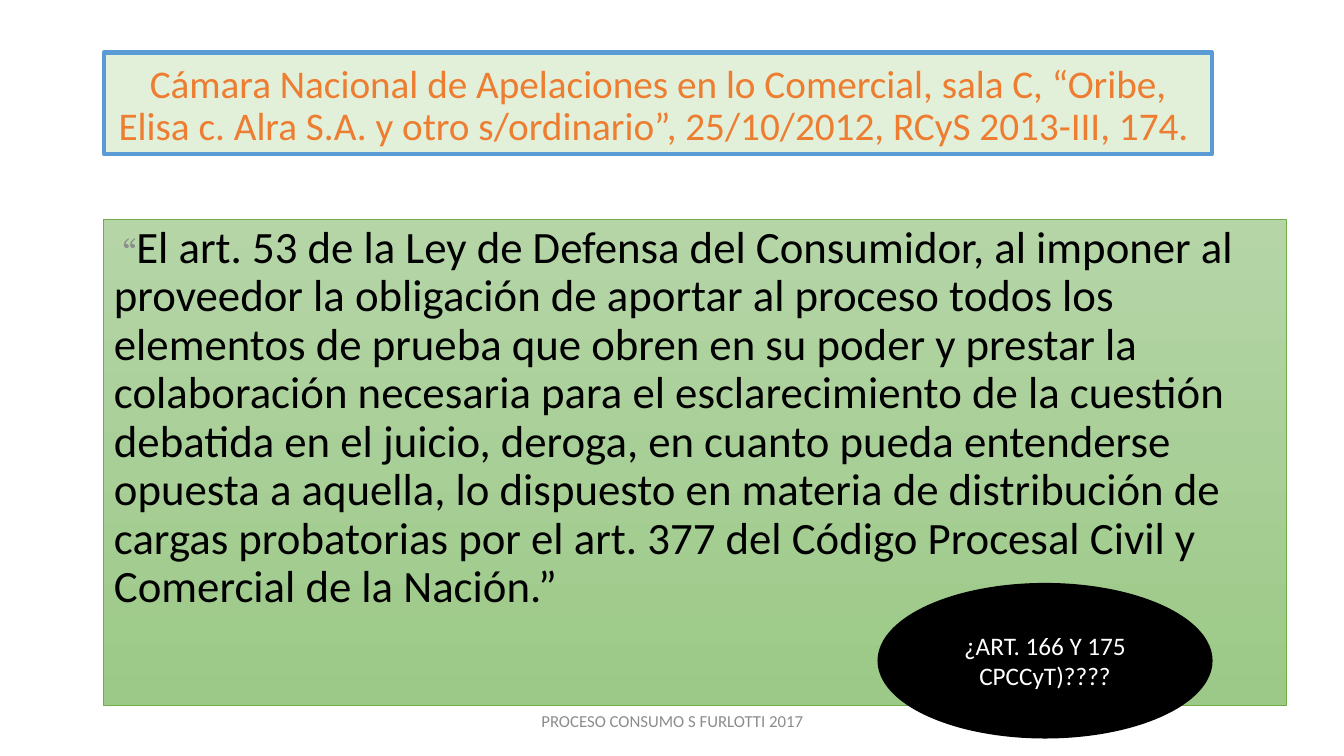
from pptx import Presentation
from pptx.dml.color import RGBColor
from pptx.enum.shapes import MSO_SHAPE as Preset
from pptx.enum.text import MSO_ANCHOR as Anchor, MSO_AUTO_SIZE as AutoSize, PP_ALIGN as Align
from pptx.util import Inches, Pt
from lxml import etree

COLORS = {
    "pale_green": "E2F0D9",
    "green_top": "B5D5A7",
    "green_bottom": "9CC987",
    "green_edge": "70AD47",
    "blue": "5B9BD5",
    "orange": "ED7D31",
    "gray": "8C8C8C",
    "black": "000000",
    "white": "FFFFFF",
}
DRAWING_NS = "http://schemas.openxmlformats.org/drawingml/2006/main"


def color(name):
    return RGBColor.from_string(COLORS[name])


class RulingSlide:
    def __init__(self, deck):
        self.font = "Calibri"
        self.slide = deck.slides.add_slide(deck.slide_layouts[1])

    def place(self, shape, left, top, width, height):
        shape.left, shape.top = Inches(left), Inches(top)
        shape.width, shape.height = Inches(width), Inches(height)

    def outline(self, shape, line_color, width):
        shape.line.color.rgb = color(line_color)
        shape.line.width = Pt(width)

    def set_text(self, shape, runs, align, anchor, spacing=1.0):
        """Fill the shape with one paragraph of (text, size, color, font) runs."""
        frame = shape.text_frame
        frame.word_wrap = True
        frame.auto_size = AutoSize.NONE
        frame.vertical_anchor = anchor
        paragraph = frame.paragraphs[0]
        paragraph.alignment = align
        paragraph.line_spacing = spacing
        paragraph.space_before = Pt(0)
        for text, size, text_color, font in runs:
            run = paragraph.add_run()
            run.text = text
            run.font.size = Pt(size)
            run.font.name = font or self.font
            run.font.color.rgb = color(text_color)
        return paragraph

    def title(self, text, box):
        heading = self.slide.shapes.title
        self.place(heading, *box)
        heading.fill.solid()
        heading.fill.fore_color.rgb = color("pale_green")
        self.outline(heading, "blue", 3)
        self.set_text(heading, [(text, 28, "orange", None)], Align.CENTER, Anchor.BOTTOM, 0.9)

    def quotation(self, runs, box):
        body = self.slide.placeholders[1]
        self.place(body, *box)
        body.fill.gradient()
        body.fill.gradient_angle = 270
        for stop, shade in zip(body.fill.gradient_stops, ("green_top", "green_bottom")):
            stop.color.rgb = color(shade)
        self.outline(body, "green_edge", 0.5)
        paragraph = self.set_text(body, runs, Align.LEFT, Anchor.TOP, 0.9)
        properties = paragraph._p.get_or_add_pPr()
        properties.set("marL", "0")
        properties.set("indent", "0")
        etree.SubElement(properties, f"{{{DRAWING_NS}}}buNone")

    def ellipse(self, text, box):
        question = self.slide.shapes.add_shape(Preset.OVAL, *map(Inches, box))
        question.shadow.inherit = False
        question.fill.solid()
        question.fill.fore_color.rgb = color("black")
        self.outline(question, "black", 1)
        self.set_text(question, [(text, 18, "white", None)], Align.CENTER, Anchor.MIDDLE)

    def footer(self, text, box):
        credit = self.slide.shapes.add_textbox(*map(Inches, box))
        self.set_text(credit, [(text, 12, "gray", None)], Align.CENTER, Anchor.MIDDLE)


def main():
    deck = Presentation()
    deck.slide_width, deck.slide_height = Inches(13.33), Inches(7.5)
    ruling = RulingSlide(deck)
    ruling.title(
        "Cámara Nacional de Apelaciones en lo Comercial, sala C, “Oribe, Elisa c. Alra S.A. "
        "y otro s/ordinario”, 25/10/2012, RCyS 2013-III, 174. ",
        (1.03, 0.52, 10.99, 1.01),
    )
    ruling.quotation(
        [
            (" “", 24, "gray", "TeX Gyre Schola"),
            (
                "El art. 53 de la Ley de Defensa del Consumidor, al imponer al proveedor la "
                "obligación de aportar al proceso todos los elementos de prueba que obren en su "
                "poder y prestar la colaboración necesaria para el esclarecimiento de la cuestión "
                "debatida en el juicio, deroga, en cuanto pueda entenderse opuesta a aquella, lo "
                "dispuesto en materia de distribución de cargas probatorias por el art. 377 del "
                "Código Procesal Civil y Comercial de la Nación.”",
                32, "black", None,
            ),
        ],
        (1.03, 2.18, 11.73, 4.82),
    )
    ruling.ellipse("¿ART. 166 Y 175 CPCCyT)????", (8.71, 5.79, 3.31, 1.53))
    ruling.footer("PROCESO CONSUMO S FURLOTTI 2017", (4.42, 6.95, 4.5, 0.4))
    deck.save("out.pptx")


if __name__ == "__main__":
    main()
